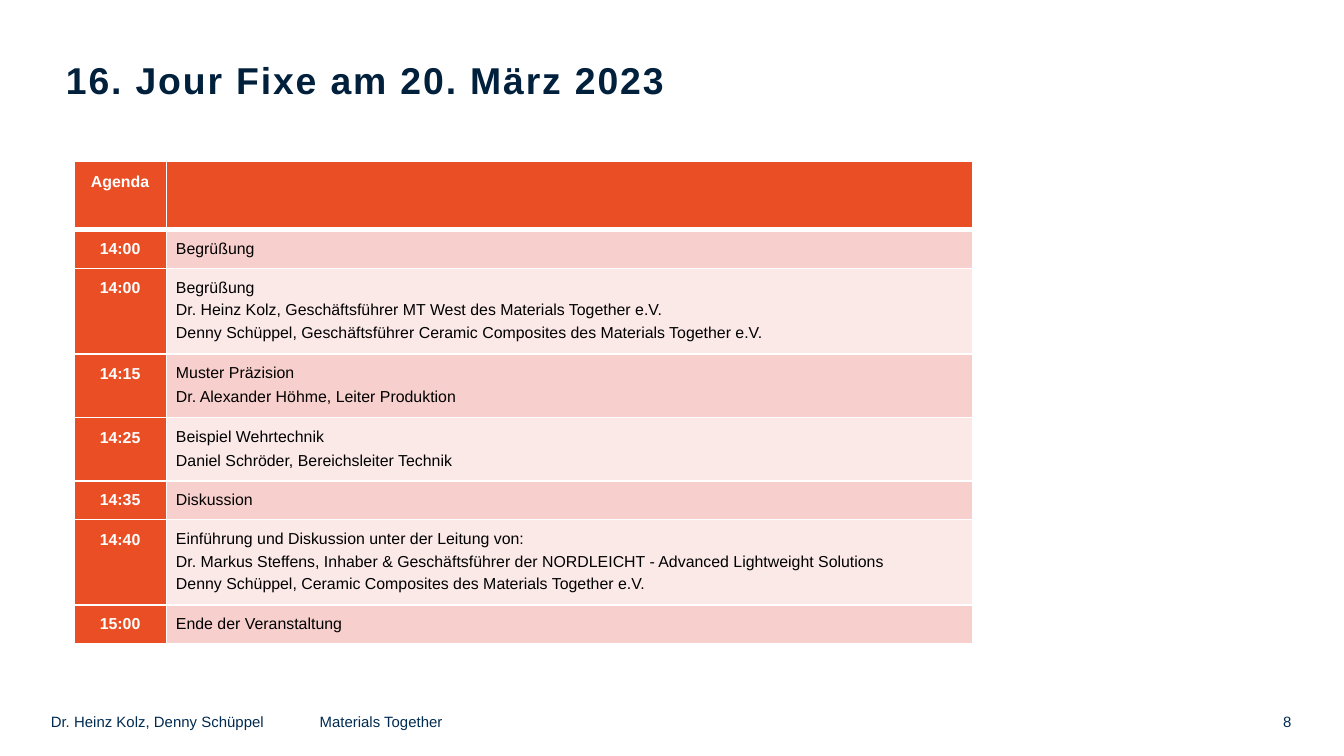
from lxml.etree import SubElement
from pptx import Presentation
from pptx.dml.color import RGBColor
from pptx.enum.text import MSO_ANCHOR as Anchor, MSO_AUTO_SIZE as AutoSize, PP_ALIGN as Align
from pptx.oxml.ns import qn
from pptx.util import Pt

COLORS = {"title": "00203C", "footer": "002B51", "orange": "E94E24", "dark_band": "F7D0CD",
          "light_band": "FBE9E8", "white": "FFFFFF", "black": "000000"}
FONT = "Arial"


def style(para, size, color, bold=False, align=Align.LEFT):
    para.alignment = align
    para.font.name = FONT
    para.font.size = Pt(size)
    para.font.bold = bold
    para.font.color.rgb = RGBColor.from_string(COLORS[color])


def paint_cell(cell, fill, top=1, bottom=1):
    props = cell._tc.get_or_add_tcPr()
    for side, width in (("L", 1), ("R", 1), ("T", top), ("B", bottom)):
        line = SubElement(props, qn(f"a:ln{side}"), w=str(Pt(width)))
        SubElement(SubElement(line, qn("a:solidFill")), qn("a:srgbClr"), val=COLORS["white"])
    cell.fill.solid()
    cell.fill.fore_color.rgb = RGBColor.from_string(COLORS[fill])
    cell.margin_left = cell.margin_right = Pt(5.2)
    cell.margin_top = cell.margin_bottom = Pt(5.5)


deck = Presentation()
deck.slide_width, deck.slide_height = Pt(720), Pt(405)
page = deck.slides.add_slide(deck.slide_layouts[5])

# Title
title = page.shapes.title
title.left, title.top, title.width, title.height = Pt(28.8), Pt(21.6), Pt(384.5), Pt(42.5)
frame = title.text_frame
frame.margin_left = Pt(6.5)
frame.margin_right = frame.margin_top = frame.margin_bottom = 0
frame.vertical_anchor = Anchor.MIDDLE
frame.auto_size = AutoSize.NONE
frame.word_wrap = True
frame.text = "16. Jour Fixe am 20. März 2023"
style(frame.paragraphs[0], 20, "title", bold=True)
frame.paragraphs[0].runs[0]._r.get_or_add_rPr().set("spc", "100")

# Agenda: time, lines, row height, and whether the time and last line are set looser
agenda = [
    ("Agenda", [], 36.5, True),
    ("14:00", ["Begrüßung"], 20.8, False),
    ("14:00", ["Begrüßung",
               "Dr. Heinz Kolz, Geschäftsführer MT West des Materials Together e.V.",
               "Denny Schüppel, Geschäftsführer Ceramic Composites des Materials Together e.V."],
     45.8, False),
    ("14:15", ["Muster Präzision", "Dr. Alexander Höhme, Leiter Produktion"], 34, True),
    ("14:25", ["Beispiel Wehrtechnik", "Daniel Schröder, Bereichsleiter Technik"], 34, True),
    ("14:35", ["Diskussion"], 20.8, False),
    ("14:40", ["Einführung und Diskussion unter der Leitung von:",
               "Dr. Markus Steffens, Inhaber & Geschäftsführer der NORDLEICHT - Advanced Lightweight Solutions",
               "Denny Schüppel, Ceramic Composites des Materials Together e.V."], 45.8, True),
    ("15:00", ["Ende der Veranstaltung"], 20.8, False),
]
height = sum(entry[2] for entry in agenda)
table = page.shapes.add_table(len(agenda), 2, Pt(39.6), Pt(86.6), Pt(481.5), Pt(height)).table
table.columns[0].width, table.columns[1].width = Pt(49.5), Pt(432)

for index, (time, lines, row_height, loose) in enumerate(agenda):
    table.rows[index].height = Pt(row_height)
    time_cell, text_cell = table.cell(index, 0), table.cell(index, 1)
    band = "orange" if index == 0 else "dark_band" if index % 2 else "light_band"
    top, bottom = (3 if index == 1 else 1), (3 if index == 0 else 1)
    paint_cell(time_cell, "orange", top, bottom)
    paint_cell(text_cell, band, top, bottom)

    time_cell.text = time
    para = time_cell.text_frame.paragraphs[0]
    style(para, 8.5, "white", bold=True, align=Align.CENTER)
    para.space_after = Pt(2 if loose else 2.75)
    if loose:
        para.line_spacing = 1.07

    if lines:
        text_cell.text = "\n".join(lines)
        for para in text_cell.text_frame.paragraphs:
            style(para, 8.5, "black")
            para.space_after = Pt(2.75)
        if len(lines) == 2:
            para.line_spacing = 1.07
            para.space_after = Pt(2)

# Footer and page number
for text, left, top, width, align in (
        ("Dr. Heinz Kolz, Denny Schüppel\tMaterials Together", 27.2, 381.6, 618.5, Align.LEFT),
        ("8", 637.2, 381.6, 54.7, Align.RIGHT)):
    box = page.shapes.add_textbox(Pt(left), Pt(top), Pt(width), Pt(9.4))
    frame = box.text_frame
    frame.margin_left = frame.margin_right = frame.margin_top = frame.margin_bottom = 0
    frame.word_wrap = True
    frame.text = text
    style(frame.paragraphs[0], 8, "footer", align=align)

deck.save("out.pptx")
